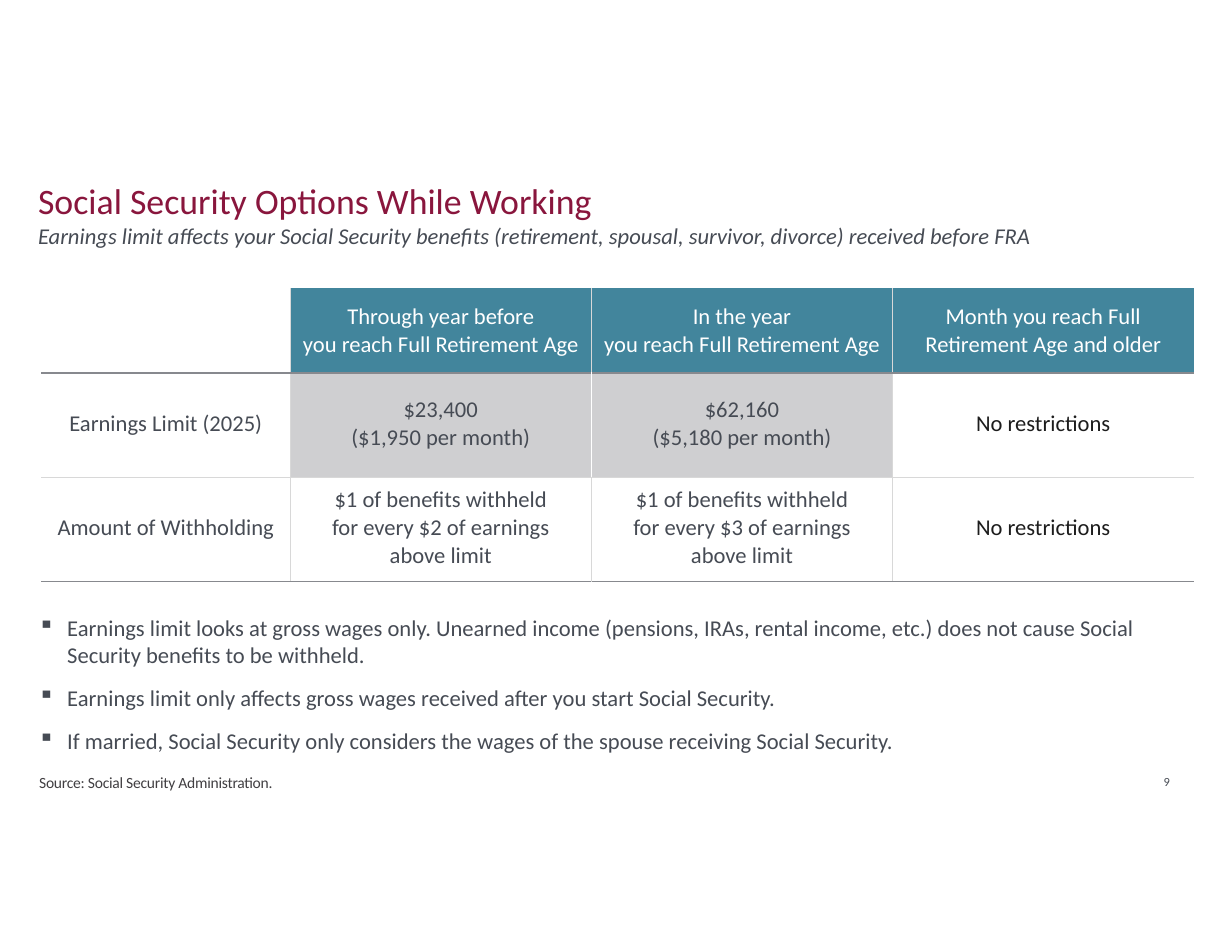
import pptx
import pptx.dml.color
import pptx.enum.text
import pptx.oxml.ns
import pptx.util
from lxml import etree
from pptx.util import Inches

THEME = {
    "font": "Calibri",
    "title": "89163D", "text": "464B54", "source": "413F42", "strong": "1D1D1D",
    "white": "FFFFFF", "teal": "42859C", "gray": "CFCFD1",
    "rule": "87898E", "hairline": "D8D8D8",
    "title_size": 23, "body_size": 14.5, "source_size": 10, "number_size": 8,
}
CENTER = pptx.enum.text.PP_ALIGN.CENTER
MIDDLE = pptx.enum.text.MSO_ANCHOR.MIDDLE


def add_text_box(left, top, width, height):
    frame = slide.shapes.add_textbox(
        Inches(left), Inches(top), Inches(width), Inches(height)).text_frame
    frame.word_wrap = True
    frame.margin_left = frame.margin_top = frame.margin_right = frame.margin_bottom = 0
    return frame


def add_line(frame, index, text, size, color, italic=False, spacing=0):
    paragraph = frame.paragraphs[0] if index == 0 else frame.add_paragraph()
    run = paragraph.add_run()
    run.text = text
    run.font.name = THEME["font"]
    run.font.size = pptx.util.Pt(THEME[size])
    run.font.color.rgb = pptx.dml.color.RGBColor.from_string(THEME[color])
    run.font.italic = italic
    if spacing:
        run.font._element.set("spc", str(spacing))
    return paragraph


deck = pptx.Presentation()
deck.slide_width, deck.slide_height = Inches(11), Inches(8.5)
slide = deck.slides.add_slide(deck.slide_layouts[6])

# Title and subtitle
heading = add_text_box(0.34, 1.6, 10.33, 0.65)
title = add_line(heading, 0, "Social Security Options While Working", "title_size", "title")
title.line_spacing = pptx.util.Pt(27.4)
subtitle = add_line(
    heading, 1,
    "Earnings limit affects your Social Security benefits "
    "(retirement, spousal, survivor, divorce) received before FRA",
    "body_size", "text", italic=True)
subtitle.line_spacing = pptx.util.Pt(17.2)

# Earnings limit table: each cell is a list of lines
rows = [
    [[],
     ["Through year before", "you reach Full Retirement Age"],
     ["In the year", "you reach Full Retirement Age"],
     ["Month you reach Full", "Retirement Age and older"]],
    [["Earnings Limit (2025)"],
     ["$23,400", "($1,950 per month)"],
     ["$62,160", "($5,180 per month)"],
     ["No restrictions"]],
    [["Amount of Withholding"],
     ["$1 of benefits withheld", "for every $2 of earnings", "above limit"],
     ["$1 of benefits withheld", "for every $3 of earnings", "above limit"],
     ["No restrictions"]],
]
column_widths = [2.22, 2.69, 2.69, 2.69]
row_heights = [0.76, 0.93, 0.93]
# Horizontal rules from the top edge to the bottom edge
row_rules = [None, ("rule", 1), ("hairline", 0.75), ("rule", 1)]

limits = slide.shapes.add_table(
    3, 4, Inches(0.37), Inches(2.57), Inches(sum(column_widths)),
    Inches(sum(row_heights))).table
limits.first_row = limits.horz_banding = False
for column, width in zip(limits.columns, column_widths):
    column.width = Inches(width)
for row, height in zip(limits.rows, row_heights):
    row.height = Inches(height)

for r, row in enumerate(rows):
    divider = ("white", 1) if r == 1 else ("hairline", 0.75)
    column_rules = [None, ("hairline", 0.75), divider, ("hairline", 0.75), None]
    for c, lines in enumerate(row):
        cell = limits.cell(r, c)
        cell.margin_left = cell.margin_right = cell.margin_top = 0
        cell.margin_bottom = Inches(0.03 if r else 0)
        cell.vertical_anchor = MIDDLE

        # Borders
        borders = {"lnL": column_rules[c], "lnR": column_rules[c + 1],
                   "lnT": row_rules[r], "lnB": row_rules[r + 1]}
        properties = cell._tc.get_or_add_tcPr()
        for side, rule in borders.items():
            edge = etree.SubElement(properties, pptx.oxml.ns.qn(f"a:{side}"))
            if rule is None:
                etree.SubElement(edge, pptx.oxml.ns.qn("a:noFill"))
                continue
            color, weight = rule
            edge.set("w", str(pptx.util.Pt(weight)))
            paint = etree.SubElement(edge, pptx.oxml.ns.qn("a:solidFill"))
            etree.SubElement(paint, pptx.oxml.ns.qn("a:srgbClr"), val=THEME[color])

        # Fill and text colour
        fill = "teal" if r == 0 and c > 0 else "gray" if r == 1 and c in (1, 2) else None
        if fill:
            cell.fill.solid()
            cell.fill.fore_color.rgb = pptx.dml.color.RGBColor.from_string(THEME[fill])
        else:
            cell.fill.background()
        color = "white" if r == 0 else "strong" if c == 3 else "text"
        for i, line in enumerate(lines):
            paragraph = add_line(cell.text_frame, i, line, "body_size", color)
            paragraph.alignment = CENTER
            paragraph.line_spacing = 1.02

# Bullets
notes = [
    "Earnings limit looks at gross wages only. Unearned income (pensions, IRAs, "
    "rental income, etc.) does not cause Social Security benefits to be withheld.",
    "Earnings limit only affects gross wages received after you start Social Security.",
    "If married, Social Security only considers the wages of the spouse "
    "receiving Social Security.",
]
remarks = add_text_box(0.33, 5.48, 9.97, 1.29)
for i, note in enumerate(notes):
    paragraph = add_line(remarks, i, note, "body_size", "text")
    if i:
        paragraph.space_before = pptx.util.Pt(10.3)
    properties = paragraph._p.get_or_add_pPr()
    properties.set("marL", str(Inches(0.27)))
    properties.set("indent", str(Inches(-0.26)))
    etree.SubElement(properties, pptx.oxml.ns.qn("a:buChar"), char="▪")

# Source and page number
source = add_text_box(0.35, 6.92, 2.4, 0.17)
add_line(source, 0, "Source: Social Security Administration.", "source_size", "source",
         spacing=-13).line_spacing = pptx.util.Pt(10.4)
page_number = add_text_box(10.39, 6.92, 0.18, 0.15)
add_line(page_number, 0, "9", "number_size", "text").line_spacing = pptx.util.Pt(8.8)

deck.save("out.pptx")
